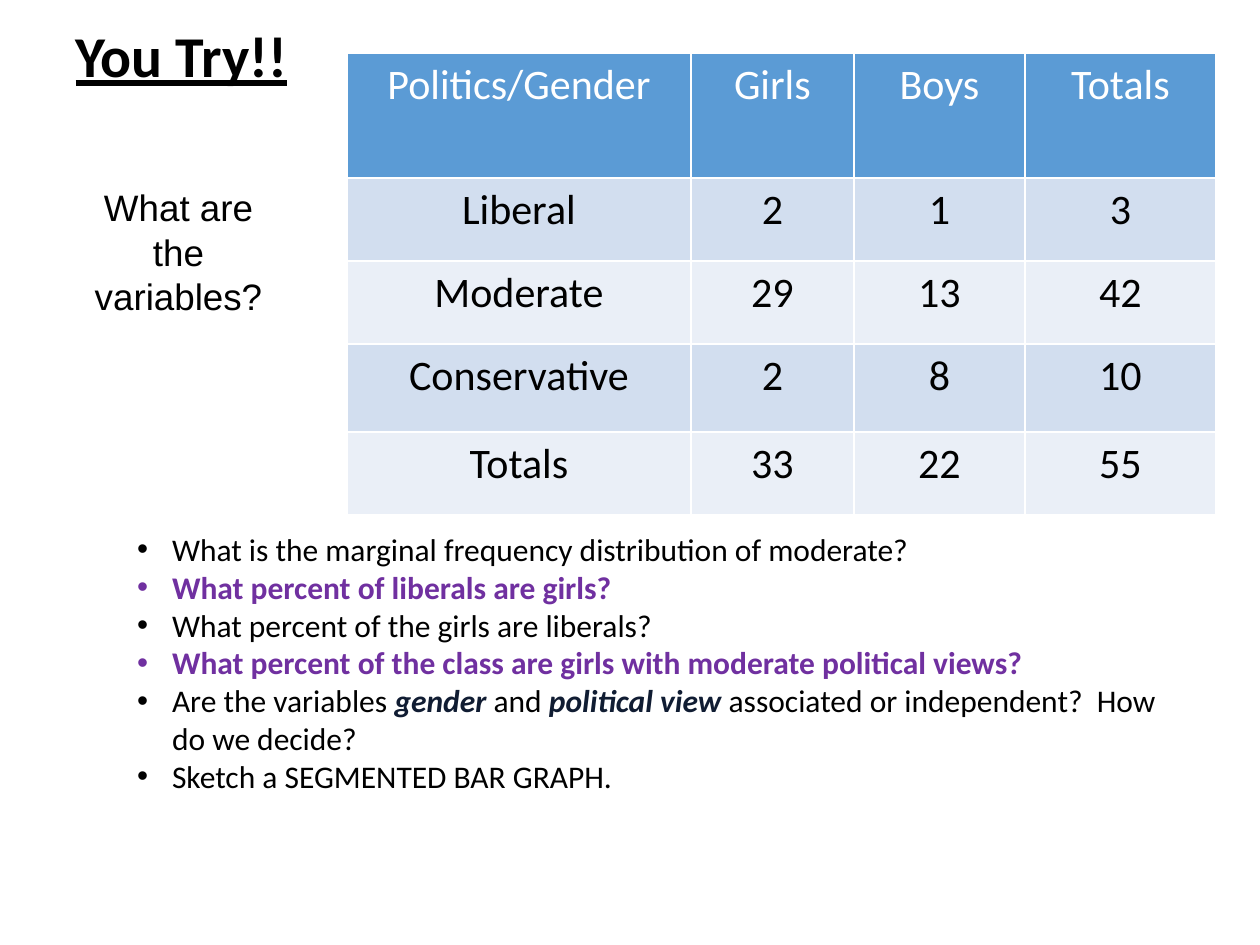
"""Build a slide with a two-way table of politics by gender and practice questions."""
import pptx
import pptx.dml.color
import pptx.enum.text
import pptx.util

PX = 914400 // 126
BLACK, WHITE, PURPLE, NAVY = "000000", "FFFFFF", "7030A0", "101C32"
HEADER_FILL, BAND_FILLS = "5B9BD5", ("D2DEEF", "EAEFF7")
CENTER = pptx.enum.text.PP_ALIGN.CENTER
LEFT = pptx.enum.text.PP_ALIGN.LEFT

TITLE = "You Try!!"
PROMPT = "What are the variables?"
TABLE = [
    ("Politics/Gender", "Girls", "Boys", "Totals"),
    ("Liberal", "2", "1", "3"),
    ("Moderate", "29", "13", "42"),
    ("Conservative", "2", "8", "10"),
    ("Totals", "33", "22", "55"),
]
COLUMN_WIDTHS = (344, 163, 171, 191)
ROW_HEIGHTS = (125, 83, 83, 88, 83)

PLAIN = {"color": BLACK}
STRONG = {"color": PURPLE, "bold": True}
TERM = {"color": NAVY, "bold": True, "italic": True}
QUESTIONS = [
    [("What is the marginal frequency distribution of moderate?", PLAIN)],
    [("What percent of liberals are girls?", STRONG)],
    [("What percent of the girls are liberals?", PLAIN)],
    [("What percent of the class are girls with moderate political views?", STRONG)],
    [
        ("Are the variables ", PLAIN),
        ("gender", TERM),
        (" and ", PLAIN),
        ("political view ", TERM),
        ("associated or independent?  How do we decide?", PLAIN),
    ],
    [("Sketch a SEGMENTED BAR GRAPH.", PLAIN)],
]


def rgb(value):
    return pptx.dml.color.RGBColor.from_string(value)


def add_text(para, text, size=18, font="Calibri", color=BLACK, bold=False,
             italic=False, underline=False, align=LEFT):
    para.alignment = align
    span = para.add_run()
    span.text = text
    span.font.size = pptx.util.Pt(size)
    span.font.name = font
    span.font.color.rgb = rgb(color)
    span.font.bold, span.font.italic, span.font.underline = bold, italic, underline


def place(shape, left, top, width, height):
    shape.left, shape.top = left * PX, top * PX
    shape.width, shape.height = width * PX, height * PX


def fill_title(title):
    place(title, 63, -10, 1144, 137)
    title.text_frame.auto_size = pptx.enum.text.MSO_AUTO_SIZE.NONE
    para = title.text_frame.paragraphs[0]
    para.line_spacing = 0.9
    add_text(para, TITLE, size=33, bold=True, underline=True)


def add_politics_table(page):
    frame = page.shapes.add_table(
        len(TABLE), len(COLUMN_WIDTHS), 347 * PX, 53 * PX,
        sum(COLUMN_WIDTHS) * PX, sum(ROW_HEIGHTS) * PX)
    table = frame.table
    for column, width in zip(table.columns, COLUMN_WIDTHS):
        column.width = width * PX
    for index, (row, height) in enumerate(zip(table.rows, ROW_HEIGHTS)):
        row.height = height * PX
        header = index == 0
        for cell, text in zip(row.cells, TABLE[index]):
            cell.fill.solid()
            cell.fill.fore_color.rgb = rgb(HEADER_FILL if header else BAND_FILLS[(index - 1) % 2])
            add_text(cell.text_frame.paragraphs[0], text, size=24,
                     color=WHITE if header else BLACK, align=CENTER)


def fill_questions(body):
    place(body, 126, 525, 1081, 368)
    frame = body.text_frame
    frame.auto_size = pptx.enum.text.MSO_AUTO_SIZE.NONE
    frame.margin_left = frame.margin_right = 11 * PX
    frame.margin_top = frame.margin_bottom = 5 * PX
    for index, question in enumerate(QUESTIONS):
        para = frame.add_paragraph() if index else frame.paragraphs[0]
        para.space_before = pptx.util.Pt(0)
        properties = para._p.get_or_add_pPr()
        properties.set("marL", str(35 * PX))
        properties.set("indent", str(-35 * PX))
        for text, style in question:
            add_text(para, text, **style)


def add_prompt(page):
    box = page.shapes.add_textbox(63 * PX, 179 * PX, 231 * PX, 146 * PX)
    box.text_frame.word_wrap = True
    add_text(box.text_frame.paragraphs[0], PROMPT, size=21, font="Arial", align=CENTER)


def main():
    deck = pptx.Presentation()
    deck.slide_width, deck.slide_height = pptx.util.Inches(10), pptx.util.Inches(7.5)
    page = deck.slides.add_slide(deck.slide_layouts[1])
    fill_title(page.shapes.title)
    add_politics_table(page)
    fill_questions(page.placeholders[1])
    add_prompt(page)
    deck.save("out.pptx")


if __name__ == "__main__":
    main()
